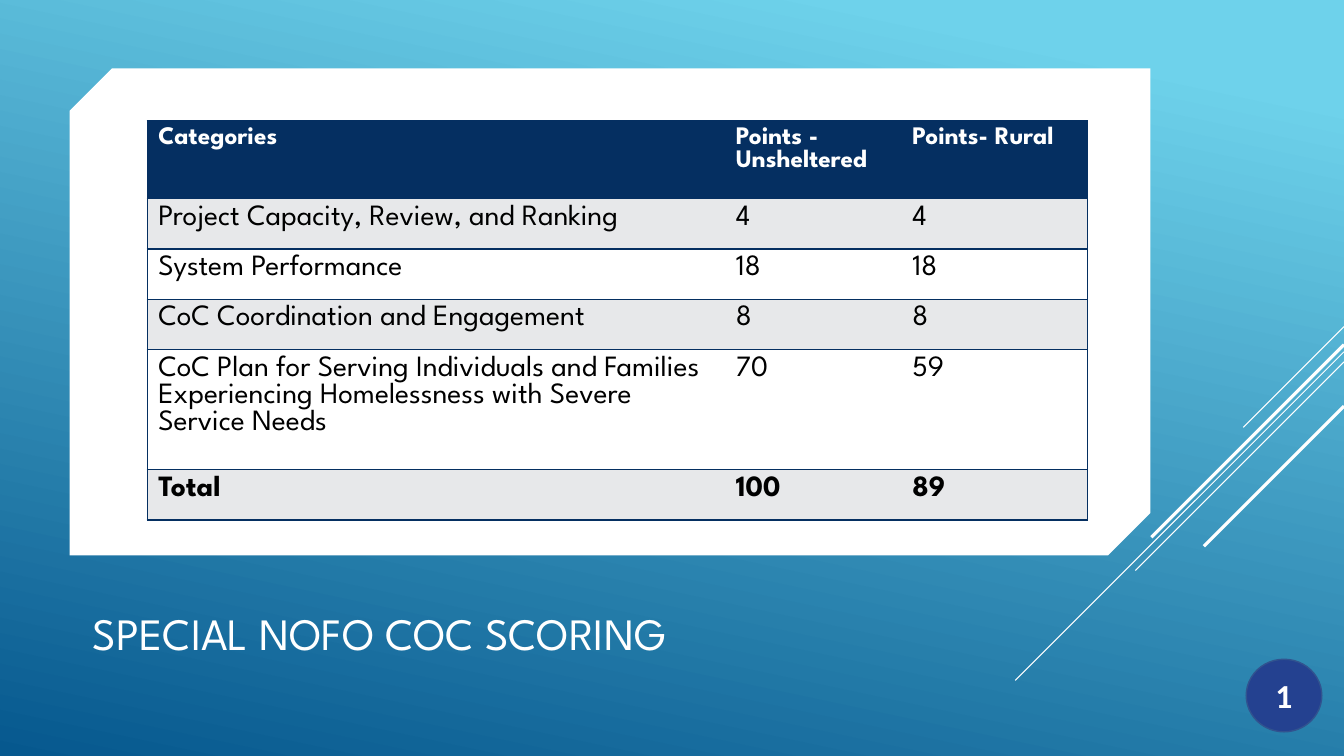
import lxml.etree
import pptx
import pptx.dml.color
import pptx.enum.shapes
import pptx.enum.text
import pptx.oxml.ns
import pptx.util

Inches = pptx.util.Inches
Pt = pptx.util.Pt
Shape = pptx.enum.shapes.MSO_SHAPE
Align = pptx.enum.text.PP_ALIGN
Anchor = pptx.enum.text.MSO_ANCHOR
qn = pptx.oxml.ns.qn

WIDTH, HEIGHT = 13.33, 7.5
COLORS = {
    "sky": "6ED2EB", "ocean": "06588E", "white": "FFFFFF", "black": "000000",
    "navy": "052F61", "band": "E7E8EA", "badge": "244190", "badge_edge": "31538F",
}
ROWS = [
    ("Categories", "Points - Unsheltered", "Points- Rural"),
    ("Project Capacity, Review, and Ranking", "4", "4"),
    ("System Performance", "18", "18"),
    ("CoC Coordination and Engagement", "8", "8"),
    ("CoC Plan for Serving Individuals and Families Experiencing "
     "Homelessness with Severe Service Needs", "70", "59"),
    ("Total", "100", "89"),
]
COLUMN_WIDTHS = [5.73, 1.75, 1.85]
ROW_HEIGHTS = [0.77, 0.5, 0.5, 0.5, 1.19, 0.5]
DIAGONALS = [(3.24, 1, 0.75), (3.49, 3.26, 0.75), (3.59, 2.07, 0.75),
             (3.42, 1.91, 2.25), (4.03, 1.39, 2.25)]


def color(name):
    return pptx.dml.color.RGBColor.from_string(COLORS[name])


class SlideBuilder:
    """Draws styled elements on the current slide."""

    def __init__(self, deck, font):
        self.font = font
        self.page = deck.slides.add_slide(deck.slide_layouts[5])

    def style(self, para, size, shade, bold=False, font=None):
        para.font.name = font or self.font
        para.font.size = Pt(size)
        para.font.bold = bold
        para.font.color.rgb = color(shade)

    def shape(self, kind, left, top, width, height, fill=None):
        box = self.page.shapes.add_shape(
            kind, Inches(left), Inches(top), Inches(width), Inches(height))
        box.shadow.inherit = False
        box.line.fill.background()
        if fill:
            box.fill.solid()
            box.fill.fore_color.rgb = color(fill)
        return box

    def backdrop(self):
        box = self.shape(Shape.RECTANGLE, 0, 0, WIDTH, HEIGHT)
        box.fill.gradient()
        box.fill.gradient_angle = 258
        for stop, position, shade in zip(box.fill.gradient_stops, (0.1, 1), ("sky", "ocean")):
            stop.position = position
            stop.color.rgb = color(shade)

    def title(self, text, left, top, width, height):
        box = self.page.shapes.title
        self.page.shapes._spTree.append(box._element)
        box.left, box.top = Inches(left), Inches(top)
        box.width, box.height = Inches(width), Inches(height)
        frame = box.text_frame
        frame.text = text
        frame.word_wrap = True
        frame.auto_size = pptx.enum.text.MSO_AUTO_SIZE.NONE
        frame.vertical_anchor = Anchor.BOTTOM
        frame.paragraphs[0].alignment = Align.LEFT
        self.style(frame.paragraphs[0], 32, "white")

    def panel(self, left, top, width, height):
        box = self.shape(Shape.SNIP_2_DIAG_RECTANGLE, left, top, width, height, "white")
        box.adjustments[0] = 0.087
        box.adjustments[1] = 0

    def diagonal(self, top, run, weight):
        line = self.page.shapes.add_connector(
            pptx.enum.shapes.MSO_CONNECTOR.STRAIGHT, Inches(WIDTH), Inches(top),
            Inches(WIDTH - run), Inches(top + run))
        line.line.color.rgb = color("white")
        line.line.width = Pt(weight)
        lxml.etree.SubElement(line._element.spPr, qn("a:effectLst"))

    def badge(self, text, left, top, width, height):
        box = self.shape(Shape.OVAL, left, top, width, height, "badge")
        box.line.color.rgb = color("badge_edge")
        box.line.width = Pt(1)
        frame = box.text_frame
        frame.text = text
        frame.vertical_anchor = Anchor.MIDDLE
        para = frame.paragraphs[0]
        para.alignment = Align.CENTER
        para.space_after = Pt(6)
        self.style(para, 24, "white", True, "Calibri")

    def borders(self, cell, drawn):
        properties = cell._tc.get_or_add_tcPr()
        for side in "LRTB":
            edge = lxml.etree.SubElement(properties, qn("a:ln" + side), w=str(Pt(1)))
            if side in drawn:
                fill = lxml.etree.SubElement(edge, qn("a:solidFill"))
                lxml.etree.SubElement(fill, qn("a:srgbClr"), val=COLORS["navy"])
            else:
                lxml.etree.SubElement(edge, qn("a:noFill"))

    def cell(self, cell, text, fill, size, shade, bold, drawn):
        cell.text = text
        cell.margin_left = cell.margin_right = Inches(0.11)
        cell.margin_top = cell.margin_bottom = Inches(0.06)
        self.style(cell.text_frame.paragraphs[0], size, shade, bold)
        self.borders(cell, drawn)
        cell.fill.solid()
        cell.fill.fore_color.rgb = color(fill)

    def table(self, left, top, rows, widths, heights):
        table = self.page.shapes.add_table(
            len(rows), len(widths), Inches(left), Inches(top),
            Inches(sum(widths)), Inches(sum(heights))).table
        for column, width in zip(table.columns, widths):
            column.width = Inches(width)
        for row, height in zip(table.rows, heights):
            row.height = Inches(height)
        last_row, last_column = len(rows) - 1, len(widths) - 1
        for r, texts in enumerate(rows):
            fill = "navy" if r == 0 else "band" if r % 2 else "white"
            size, shade = (18, "white") if r == 0 else (21, "black")
            for c, text in enumerate(texts):
                drawn = "TB" + ("L" if c == 0 else "R" if c == last_column else "")
                self.cell(table.cell(r, c), text, fill, size, shade, r in (0, last_row), drawn)


def main():
    deck = pptx.Presentation()
    deck.slide_width, deck.slide_height = Inches(WIDTH), Inches(HEIGHT)
    builder = SlideBuilder(deck, "League Spartan")
    builder.backdrop()
    builder.title("SPECIAL NOFO COC SCORING", 0.82, 5.67, 9.52, 0.92)
    builder.panel(0.69, 0.68, 10.72, 4.83)
    for diagonal in DIAGONALS:
        builder.diagonal(*diagonal)
    builder.badge("1", 12.36, 6.54, 0.75, 0.72)
    builder.table(1.46, 1.2, ROWS, COLUMN_WIDTHS, ROW_HEIGHTS)
    deck.save("out.pptx")


if __name__ == "__main__":
    main()
